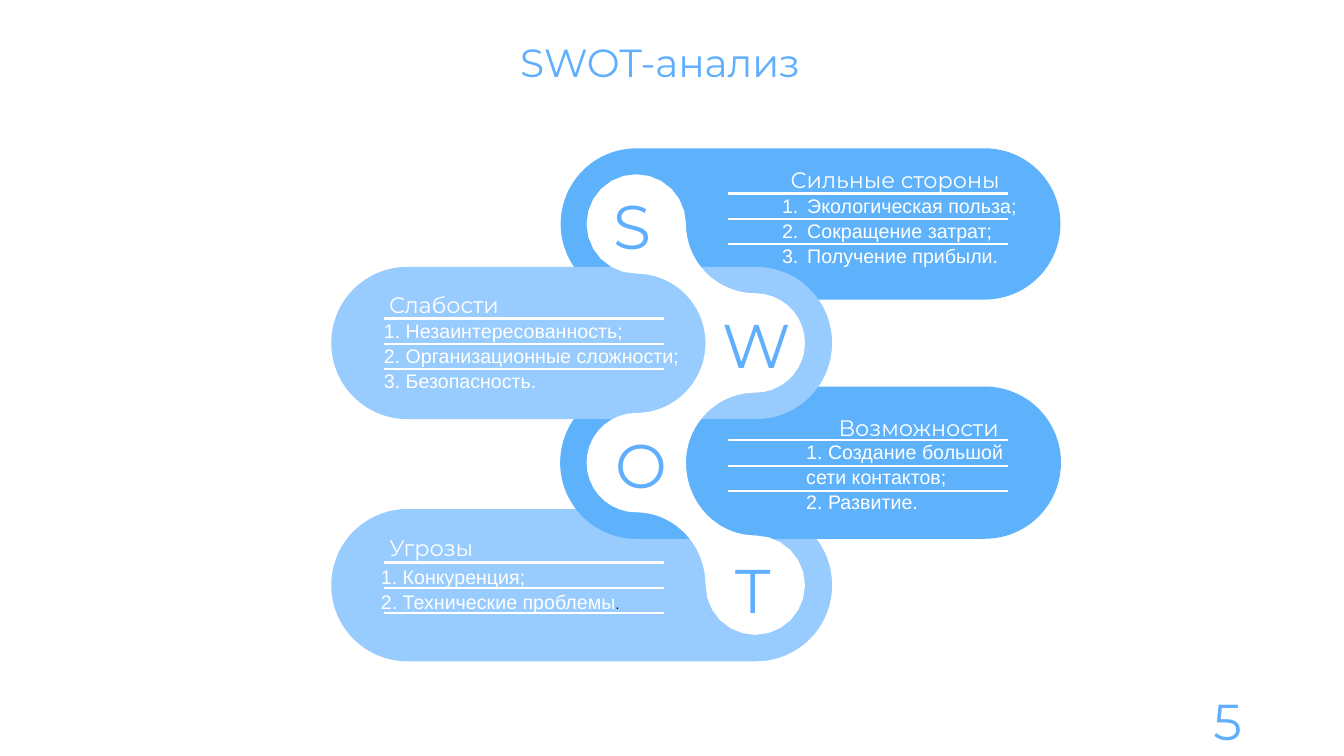
import math
from dataclasses import dataclass

import lxml.etree
import pptx
import pptx.dml.color
import pptx.enum.shapes
import pptx.enum.text
import pptx.oxml.ns
import pptx.util

Pt = pptx.util.Pt
ALIGN = pptx.enum.text.PP_ALIGN
ANCHOR = pptx.enum.text.MSO_ANCHOR
SHAPE = pptx.enum.shapes.MSO_SHAPE
LINE = pptx.enum.shapes.MSO_CONNECTOR.STRAIGHT


@dataclass(frozen=True)
class Theme:
    dark: str = "5EB2FC"
    pale: str = "98CBFE"
    blue: str = "60AEFE"
    white: str = "FFFFFF"
    black: str = "000000"
    head: str = "Montserrat"
    body: str = "Arial"
    title: int = 28
    mark: int = 44
    page: int = 36
    label: int = 16
    item: int = 14
    dot: int = 10


THEME = Theme()
LEFT, RIGHT = 454.5, 539.5
ROWS = {"S": 160, "W": 245, "O": 330.5, "T": 418}
ROUND = 35.5
NECK = RIGHT - LEFT - ROUND


def color(code):
    return pptx.dml.color.RGBColor.from_string(code)


def paint(shape, fill, edge=None):
    shape.shadow.inherit = False
    shape.fill.solid()
    shape.fill.fore_color.rgb = color(fill)
    if edge:
        shape.line.color.rgb = color(edge)
        shape.line.width = Pt(0.75)
    else:
        shape.line.fill.background()


def add_run(para, text, font, size, code):
    run = para.add_run()
    run.text = text
    run.font.name = font
    run.font.size = Pt(size)
    run.font.color.rgb = color(code)


def add_box(slide, left, top, width, height, wrap=False):
    box = slide.shapes.add_textbox(Pt(left), Pt(top), Pt(width), Pt(height))
    box.text_frame.word_wrap = wrap
    return box.text_frame


def add_title(slide, text):
    title = slide.shapes.title
    title.left, title.top = Pt(364.3), Pt(23.8)
    title.width, title.height = Pt(231), Pt(41)
    frame = title.text_frame
    frame.word_wrap = False
    frame.auto_size = pptx.enum.text.MSO_AUTO_SIZE.NONE
    frame.vertical_anchor = ANCHOR.TOP
    para = frame.paragraphs[0]
    para.alignment = ALIGN.LEFT
    add_run(para, text, THEME.head, THEME.title, THEME.blue)


def add_pill(slide, mark, left, fill, edge=None):
    top = ROWS[mark] - 54
    pill = slide.shapes.add_shape(
        SHAPE.ROUNDED_RECTANGLE, Pt(left), Pt(top), Pt(357), Pt(108))
    pill.adjustments[0] = 0.5
    paint(pill, fill, edge)


def arc(mid_x, mid_y, wide, high, start, end):
    for step in range(19):
        turn = math.radians(start + (end - start) * step / 18)
        yield (Pt(mid_x + wide * math.cos(turn)),
               Pt(mid_y + high * math.sin(turn)))


def add_chain(slide):
    s, w, o, t = ROWS.values()
    bends = [
        (LEFT, s, ROUND, ROUND, 0, -270),
        (LEFT, w, NECK, w - s - ROUND, -90, 0),
        (LEFT, w, NECK, o - w - ROUND, 0, 90),
        (LEFT, o, ROUND, ROUND, -90, -270),
        (LEFT, t, NECK, t - o - ROUND, -90, 0),
        (RIGHT, t, ROUND, ROUND, 180, -90),
        (RIGHT, o, NECK, t - o - ROUND, 90, 180),
        (RIGHT, o, NECK, o - w - ROUND, 180, 270),
        (RIGHT, w, ROUND, ROUND, 90, -90),
        (RIGHT, s, NECK, w - s - ROUND, 90, 180),
    ]
    dots = [dot for bend in bends for dot in arc(*bend)]
    form = slide.shapes.build_freeform(*dots[0])
    form.add_line_segments(dots[1:], close=True)
    paint(form.convert_to_shape(), THEME.white)


def add_rules(slide, left, top):
    for row in range(3):
        high = Pt(top + row * 18.1)
        rule = slide.shapes.add_connector(
            LINE, Pt(left), high, Pt(left + 200), high)
        rule.line.color.rgb = color(THEME.white)
        rule.line.width = Pt(1.5)
        lxml.etree.SubElement(
            rule._element.spPr, pptx.oxml.ns.qn("a:effectLst"))


def add_mark(slide, text, left, top, width):
    frame = add_box(slide, left, top, width, 60.5)
    add_run(frame.paragraphs[0], text, THEME.head, THEME.mark, THEME.blue)


def add_label(slide, text, left, top, width):
    para = add_box(slide, left, top, width, 28).paragraphs[0]
    para.alignment = ALIGN.CENTER
    para.line_spacing = 1.07
    add_run(para, text, THEME.head, THEME.label, THEME.white)


def add_number(para):
    props = para._p.get_or_add_pPr()
    props.set("marL", str(Pt(18)))
    props.set("indent", str(-Pt(18)))
    lxml.etree.SubElement(
        props, pptx.oxml.ns.qn("a:buAutoNum"), type="arabicPeriod")


def add_list(slide, items, left, top, width, align, auto=False):
    frame = add_box(slide, left, top, width, 62, wrap=True)
    for place, item in enumerate(items):
        para = frame.add_paragraph() if place else frame.paragraphs[0]
        para.alignment = align
        para.line_spacing = 1.07
        if auto:
            add_number(para)
        add_run(para, item, THEME.body, THEME.item, THEME.white)
    return frame


def add_page(slide, text):
    frame = add_box(slide, 678.2, 500.4, 216, 28.8, wrap=True)
    frame.vertical_anchor = ANCHOR.MIDDLE
    para = frame.paragraphs[0]
    para.alignment = ALIGN.RIGHT
    add_run(para, text, THEME.head, THEME.page, THEME.blue)


def main():
    deck = pptx.Presentation()
    deck.slide_width, deck.slide_height = Pt(960), Pt(540)
    slide = deck.slides.add_slide(deck.slide_layouts[5])
    add_title(slide, "SWOT-анализ")

    add_pill(slide, "T", 237, THEME.pale, THEME.pale)
    add_pill(slide, "O", 400.5, THEME.dark, THEME.dark)
    add_pill(slide, "S", 400.5, THEME.dark)
    add_pill(slide, "W", 237, THEME.pale, THEME.pale)
    add_chain(slide)

    for left, top in ((520, 138.2), (274.5, 227.5),
                      (274.5, 401.8), (520, 314.6)):
        add_rules(slide, left, top)

    add_mark(slide, "S", 431.3, 131, 47)
    add_mark(slide, "W", 509, 216, 59)
    add_mark(slide, "O", 432.7, 301.7, 52)
    add_mark(slide, "T", 518.4, 391, 47)

    add_label(slide, "Сильные стороны", 547, 113.8, 185)
    add_label(slide, "Слабости", 266.4, 203, 101.5)
    add_label(slide, "Возможности", 586, 290.9, 140.4)
    add_label(slide, "Угрозы", 267.8, 376.6, 80.6)

    add_list(slide, ["Экологическая польза;", "Сокращение затрат;",
                     "Получение прибыли."],
             551.5, 133.9, 183.6, ALIGN.JUSTIFY, auto=True)
    add_list(slide, ["1. Незаинтересованность;",
                     "2. Организационные сложности;", "3. Безопасность."],
             267.1, 223.2, 240, ALIGN.JUSTIFY)
    add_list(slide, ["1. Создание большой", "сети контактов;", "2. Развитие."],
             568.8, 309.6, 190, ALIGN.LEFT)
    threats = add_list(slide, ["1. Конкуренция;", "2. Технические проблемы"],
                       265, 398.9, 240, ALIGN.LEFT)
    add_run(threats.paragraphs[-1], ".", THEME.body, THEME.dot, THEME.black)

    add_page(slide, "5")
    deck.save("out.pptx")


if __name__ == "__main__":
    main()
